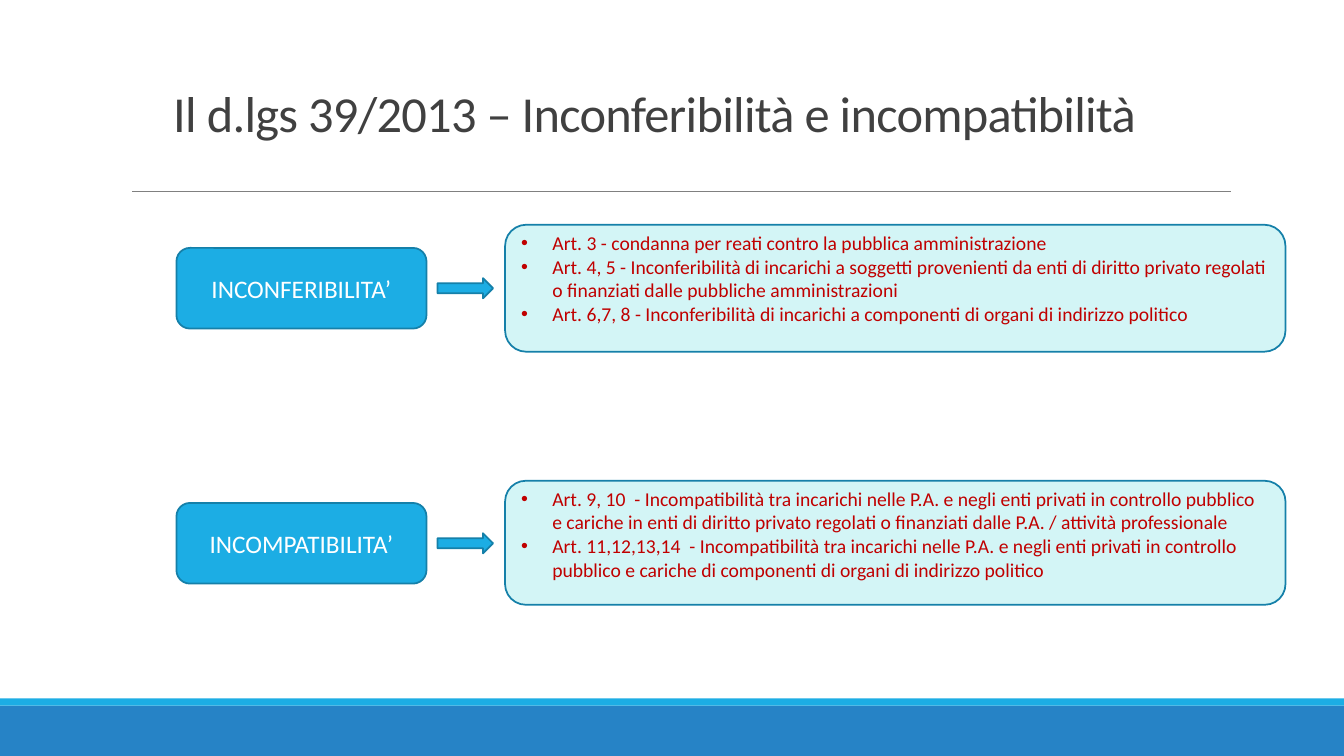
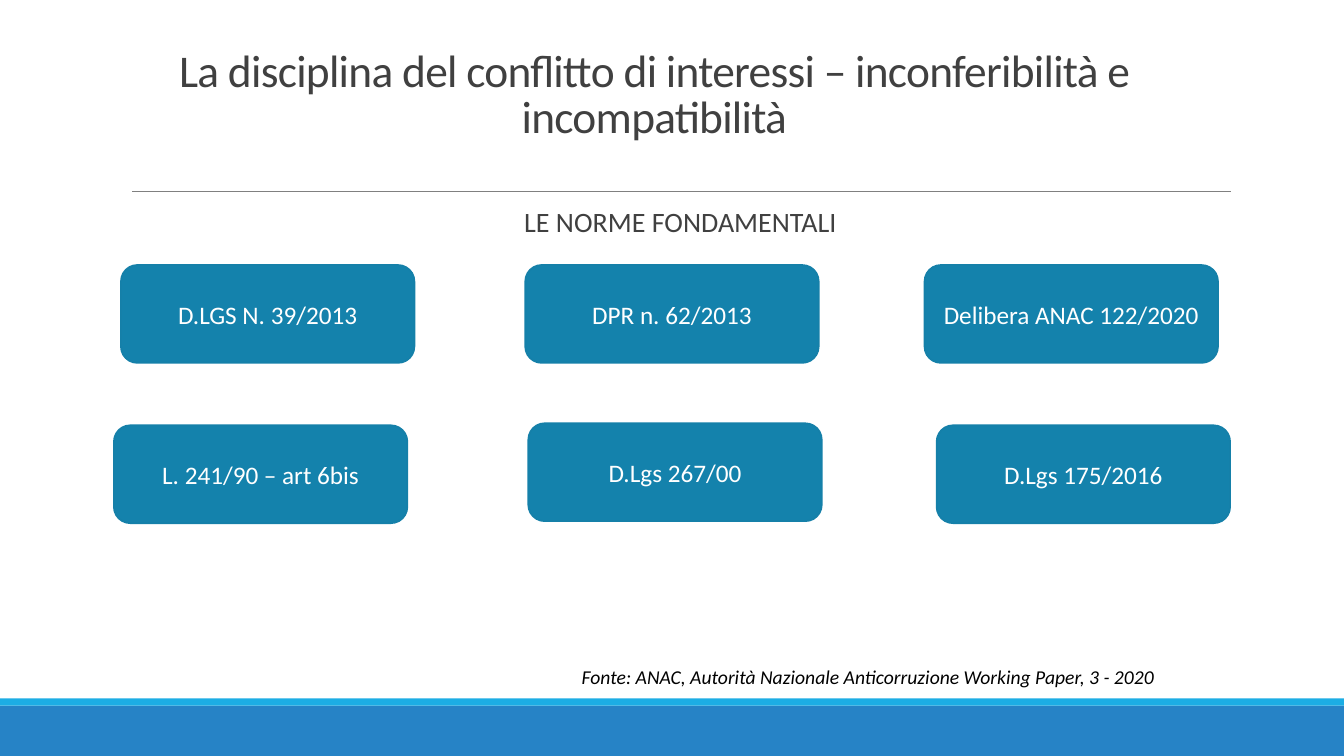
from dataclasses import dataclass

from lxml import etree
from pptx import Presentation
from pptx.dml.color import RGBColor
from pptx.enum.shapes import MSO_CONNECTOR, MSO_SHAPE
from pptx.enum.text import MSO_ANCHOR, PP_ALIGN
from pptx.oxml.ns import qn
from pptx.util import Pt

PX = 9144  # 100 px to the inch
BLANK = 6
RECT, ROUND = MSO_SHAPE.RECTANGLE, MSO_SHAPE.ROUNDED_RECTANGLE
ARROW, CARD = MSO_SHAPE.RIGHT_ARROW, MSO_SHAPE.FLOWCHART_ALTERNATE_PROCESS
STRAIGHT = MSO_CONNECTOR.STRAIGHT
TOP, MIDDLE, BOTTOM = MSO_ANCHOR.TOP, MSO_ANCHOR.MIDDLE, MSO_ANCHOR.BOTTOM
LEFT, CENTER = PP_ALIGN.LEFT, PP_ALIGN.CENTER


@dataclass(frozen=True)
class Theme:
    font: str = "Calibri"
    band: str = "2683C6"
    accent: str = "1CADE4"
    outline: str = "1580A9"
    card: str = "1482AC"
    pale: str = "D3F5F6"
    rule: str = "808080"
    dark: str = "404040"
    red: str = "C00000"
    white: str = "FFFFFF"
    black: str = "000000"
    title_size: float = 36
    long_title_size: float = 32.4
    heading_size: float = 20
    label_size: float = 18
    small_size: float = 14


T = Theme()
WIDTH, HEIGHT = 1333, 750

# Slide content: heading, box top and height, label top, articles
RULES = [
    ("INCONFERIBILITA’", 223, 126, 246, [
        "Art. 3 - condanna per reati contro la pubblica amministrazione",
        "Art. 4, 5 - Inconferibilità di incarichi a soggetti provenienti da enti "
        "di diritto privato regolati o finanziati dalle pubbliche amministrazioni",
        "Art. 6,7, 8 - Inconferibilità di incarichi a componenti di organi di "
        "indirizzo politico",
    ]),
    ("INCOMPATIBILITA’", 477, 123, 499, [
        "Art. 9, 10  - Incompatibilità tra incarichi nelle P.A. e negli enti privati "
        "in controllo pubblico e cariche in enti di diritto privato regolati o "
        "finanziati dalle P.A. / attività professionale",
        "Art. 11,12,13,14  - Incompatibilità tra incarichi nelle P.A. e negli enti "
        "privati in controllo pubblico e cariche di componenti di organi di "
        "indirizzo politico",
    ]),
]
# Legal sources: text, left, top
NORMS = [
    ("D.LGS N. 39/2013", 120, 263),
    ("DPR n. 62/2013", 521, 263),
    ("Delibera ANAC 122/2020", 917, 263),
    ("L. 241/90 – art 6bis", 113, 422),
    ("D.Lgs 267/00", 524, 420),
    ("D.Lgs 175/2016", 929, 422),
]


def emu(*lengths):
    return [n * PX for n in lengths]


def rgb(color):
    return RGBColor.from_string(color)


# Text
def add_bullet(p, indent):
    pPr = p._p.get_or_add_pPr()
    pPr.set("marL", str(indent * PX))
    pPr.set("indent", str(-indent * PX))
    etree.SubElement(pPr, qn("a:buFont"), typeface="Arial")
    etree.SubElement(pPr, qn("a:buChar"), char="•")


def write(sp, lines, size, color, align=CENTER, anchor=MIDDLE, spacing=None,
          tracking=None, italic=False, bullets=False):
    tf = sp.text_frame
    tf.word_wrap = True
    tf.vertical_anchor = anchor
    for i, line in enumerate(lines):
        p = tf.add_paragraph() if i else tf.paragraphs[0]
        p.alignment = align
        if spacing:
            p.line_spacing = spacing
        if bullets:
            add_bullet(p, 31)
        r = p.add_run()
        r.text = line
        r.font.name, r.font.size, r.font.italic = T.font, Pt(size), italic
        r.font.color.rgb = rgb(color)
        if tracking:
            r._r.get_or_add_rPr().set("spc", str(tracking))
    return tf


def add_text(s, box, text, size, color, **style):
    return write(s.shapes.add_textbox(*emu(*box)), [text], size, color, **style)


# Shapes
def add_box(s, kind, box, fill, line=None):
    sp = s.shapes.add_shape(kind, *emu(*box))
    sp.shadow.inherit = False
    sp.fill.solid()
    sp.fill.fore_color.rgb = rgb(fill)
    if line:
        sp.line.color.rgb = rgb(line)
        sp.line.width = Pt(1.25)
    else:
        sp.line.fill.background()
    return sp


def add_rule(s, x1, x2, y):
    line = s.shapes.add_connector(STRAIGHT, *emu(x1, y, x2, y))
    line.line.color.rgb = rgb(T.rule)
    line.line.width = Pt(0.5)
    etree.SubElement(line._element.spPr, qn("a:effectLst"))


# Frame shared by all slides
def add_slide(prs, title, size):
    s = prs.slides.add_slide(prs.slide_layouts[BLANK])
    add_box(s, RECT, (0, 700, WIDTH, 50), T.band)
    add_box(s, RECT, (0, 693, WIDTH, 7), T.accent)
    add_rule(s, 131, 1221, 190)
    add_text(s, (78, 65, 1142, 82), title, size, T.dark, anchor=BOTTOM,
             spacing=0.85, tracking=-50)
    return s


def add_rule_row(s, label, top, height, label_top, articles):
    label_height, arrow_height = 80, 20
    sp = add_box(s, ROUND, (175, label_top, 248, label_height), T.accent, T.outline)
    write(sp, [label], T.label_size, T.white)
    arrow_top = label_top + (label_height - arrow_height) // 2
    add_box(s, ARROW, (434, arrow_top, 55, arrow_height), T.accent, T.outline)
    sp = add_box(s, ROUND, (501, top, 774, height), T.pale, T.outline)
    tf = write(sp, articles, T.small_size, T.red, align=LEFT, anchor=TOP, bullets=True)
    tf.margin_top = 0


def add_norm(s, text, left, top):
    sp = add_box(s, CARD, (left, top, 291, 97), T.card, T.outline)
    write(sp, [text], T.label_size, T.white)


def main():
    prs = Presentation()
    prs.slide_width, prs.slide_height = emu(WIDTH, HEIGHT)

    # Inconferibilità and incompatibilità
    s = add_slide(prs, "Il d.lgs 39/2013 – Inconferibilità e incompatibilità",
                  T.title_size)
    for row in RULES:
        add_rule_row(s, *row)

    # Legal sources
    s = add_slide(prs, "La disciplina del conflitto di interessi – inconferibilità "
                  "e incompatibilità", T.long_title_size)
    add_text(s, (125, 202, 1100, 40), "LE NORME FONDAMENTALI", T.heading_size,
             T.dark, anchor=TOP, spacing=0.9)
    for norm in NORMS:
        add_norm(s, *norm)
    add_text(s, (567, 655, 700, 34),
             "Fonte: ANAC, Autorità Nazionale Anticorruzione Working Paper, 3 - 2020",
             T.small_size, T.black, align=LEFT, anchor=TOP, italic=True)

    prs.save("out.pptx")


if __name__ == "__main__":
    main()
